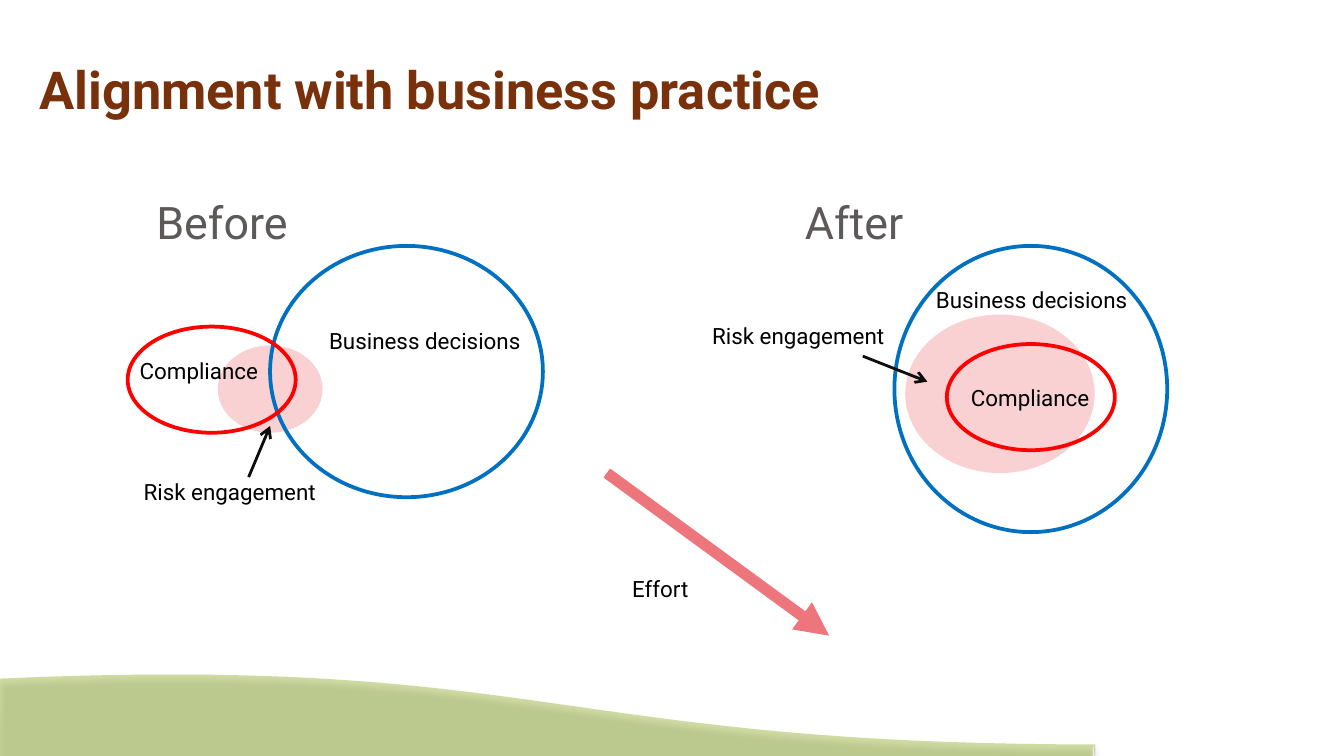
from lxml.etree import SubElement
from pptx import Presentation
from pptx.dml.color import RGBColor
from pptx.enum.shapes import MSO_CONNECTOR as CONNECTOR, MSO_SHAPE as SHAPE
from pptx.enum.text import MSO_ANCHOR as ANCHOR, MSO_AUTO_SIZE as AUTO_SIZE
from pptx.oxml import parse_xml
from pptx.oxml.ns import nsdecls, qn
from pptx.util import Pt

PX = 4572  # EMU per px, 200 px to the inch
SLIDE = (2000, 1125)
FONT = "Roboto"
BLUE, RED, PINK = "0070C0", "FF0000", "F9D1D3"
BROWN, GRAY, BLACK, INK, CORAL = "78310B", "5E5959", "000000", "0D0D0D", "EC767C"
GREEN = "93AF2A"

TITLE = ("Alignment with business practice", (0, 74, 2002, 116))
TITLE_INSET = 59

# left, top, width, height
RISK_AREAS = [(1347, 468, 282, 236), (324, 514, 156, 130)]
RINGS = [
    ((402, 366, 406, 374), BLUE),
    ((190, 486, 250, 158), RED),
    ((1331, 366, 406, 426), BLUE),
    ((1409, 512, 250, 158), RED),
]

# text, left, top, width
HEADINGS = [("Before", 213, 280, 536), ("After", 1178, 280, 536)]
LABELS = [
    ("Compliance", 188, 522, 218),
    ("Business decisions", 470, 477, 338),
    ("Compliance", 1425, 562, 218),
    ("Business decisions", 1373, 416, 338),
    ("Effort", 921, 846, 218),
    ("Risk engagement", 194, 702, 338),
    ("Risk engagement", 1040, 470, 338),
]

# from, to, colour, weight, head
ARROWS = [
    ((903, 704), (1234, 946), CORAL, 6, "triangle"),
    ((370, 710), (402, 634), INK, 1.5, "arrow"),
    ((1284, 530), (1380, 568), INK, 1.5, "arrow"),
]

HILL_START = (-2, 1128)
HILL_CORNER = (1626, 1128)
HILL_CURVES = [
    ((1626, 1074), (1630, 1160), (1630, 1108)),
    ((824, 1108), (806, 974), (0, 1010)),
    ((0, 1048), (-2, 1088), (-2, 1128)),
]
HILL_SHADOW = (
    f'<a:effectLst {nsdecls("a")}><a:outerShdw blurRad="44450" dist="27940" '
    'dir="5400000" algn="ctr" rotWithShape="0"><a:srgbClr val="000000">'
    '<a:alpha val="32000"/></a:srgbClr></a:outerShdw></a:effectLst>'
)


def rgb(code):
    return RGBColor.from_string(code)


def emu(lengths):
    return [round(length * PX) for length in lengths]


def bezier(start, first, second, end, steps=40):
    """Points along a cubic curve, without its start."""
    points = []
    for step in range(1, steps + 1):
        t = step / steps
        u = 1 - t
        points.append(tuple(
            u**3 * a + 3 * u * u * t * b + 3 * u * t * t * c + t**3 * d
            for a, b, c, d in zip(start, first, second, end)
        ))
    return points


def add_hill(shapes):
    outline = [HILL_CORNER]
    for curve in HILL_CURVES:
        outline += bezier(outline[-1], *curve)
    builder = shapes.build_freeform(*emu(HILL_START))
    builder.add_line_segments([emu(point) for point in outline], close=True)
    hill = builder.convert_to_shape()
    hill.fill.solid()
    hill.fill.fore_color.rgb = rgb(GREEN)
    hill.line.fill.background()
    color = hill._element.spPr.find(qn("a:solidFill"))[0]
    SubElement(color, qn("a:alpha"), val="43000")
    hill._element.spPr.append(parse_xml(HILL_SHADOW))


def add_ellipse(shapes, box, fill=None, line=None):
    ellipse = shapes.add_shape(SHAPE.OVAL, *emu(box))
    ellipse.shadow.inherit = False
    if fill:
        ellipse.fill.solid()
        ellipse.fill.fore_color.rgb = rgb(fill)
    else:
        ellipse.fill.background()
    if line:
        ellipse.line.color.rgb = rgb(line)
        ellipse.line.width = Pt(2)
    else:
        ellipse.line.fill.background()


def add_text(shapes, text, box, size, color, bold=False):
    frame = shapes.add_textbox(*emu(box)).text_frame
    frame.word_wrap = True
    frame.text = text
    font = frame.paragraphs[0].runs[0].font
    font.name, font.size, font.bold = FONT, Pt(size), bold
    font.color.rgb = rgb(color)
    return frame


def add_arrow(shapes, start, end, color, weight, head):
    arrow = shapes.add_connector(CONNECTOR.STRAIGHT, *emu(start + end))
    arrow.line.color.rgb = rgb(color)
    arrow.line.width = Pt(weight)
    SubElement(arrow.line._get_or_add_ln(), qn("a:tailEnd"), type=head)
    SubElement(arrow._element.spPr, qn("a:effectLst"))


def main():
    deck = Presentation()
    deck.slide_width, deck.slide_height = emu(SLIDE)
    shapes = deck.slides.add_slide(deck.slide_layouts[6]).shapes

    add_hill(shapes)
    for box in RISK_AREAS:
        add_ellipse(shapes, box, fill=PINK)

    title = add_text(shapes, *TITLE, 28, BROWN, bold=True)
    title.vertical_anchor = ANCHOR.MIDDLE
    title.margin_left = TITLE_INSET * PX

    for box, color in RINGS:
        add_ellipse(shapes, box, line=color)
    for texts, height, size, color in ((HEADINGS, 100, 24, GRAY), (LABELS, 60, 12, BLACK)):
        for text, left, top, width in texts:
            frame = add_text(shapes, text, (left, top, width, height), size, color)
            frame.auto_size = AUTO_SIZE.SHAPE_TO_FIT_TEXT
    for arrow in ARROWS:
        add_arrow(shapes, *arrow)

    deck.save("out.pptx")


if __name__ == "__main__":
    main()
